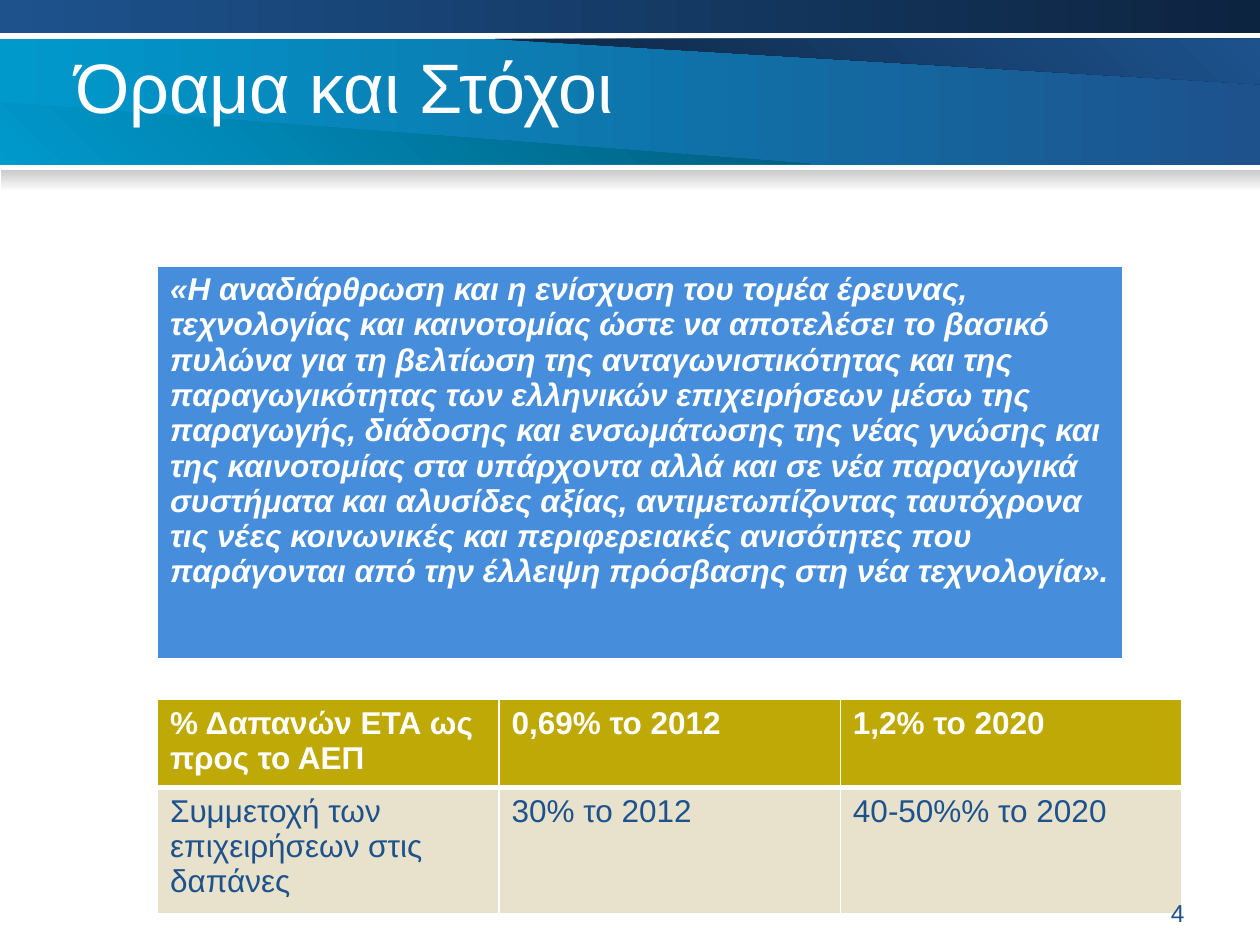
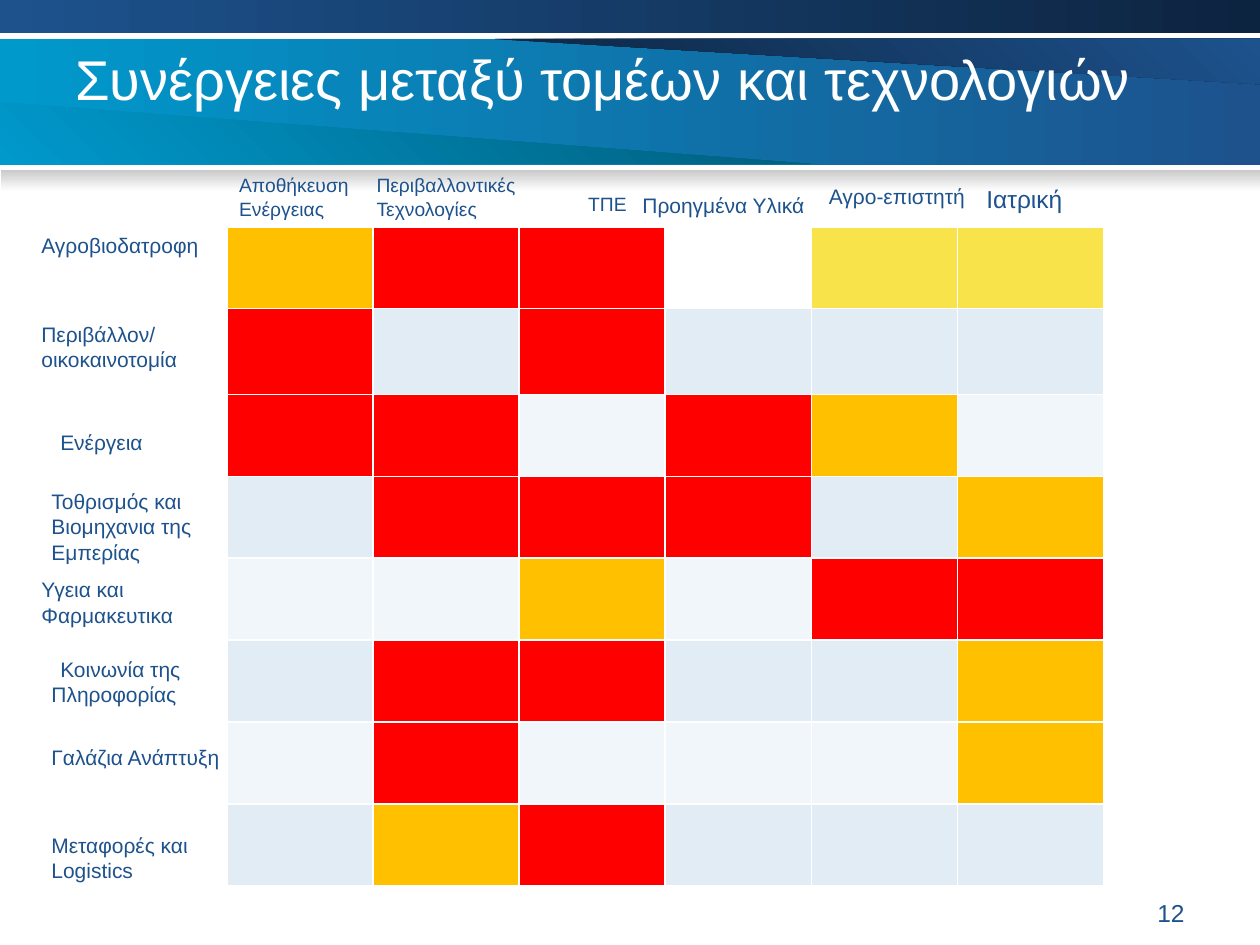
from lxml.etree import SubElement
from pptx import Presentation
from pptx.dml.color import RGBColor
from pptx.enum.shapes import MSO_SHAPE
from pptx.enum.text import MSO_ANCHOR, PP_ALIGN
from pptx.oxml.ns import qn
from pptx.util import Inches, Pt

FONT = "Arial"
WHITE = RGBColor(0xFF, 0xFF, 0xFF)
NAVY = RGBColor(0x1D, 0x52, 0x8D)
DARK_NAVY = RGBColor(0x0D, 0x24, 0x40)
CYAN = RGBColor(0x00, 0x99, 0xCC)
TEAL = RGBColor(0x00, 0x5C, 0x7B)
GREY = RGBColor(0xCA, 0xCA, 0xCA)
BLUE = RGBColor(0x46, 0x8D, 0xDC)
OLIVE = RGBColor(0xBF, 0xA9, 0x07)
SAND = RGBColor(0xE8, 0xE2, 0xCC)
RED = RGBColor(0xFF, 0x00, 0x00)
ORANGE = RGBColor(0xFF, 0xC0, 0x00)
YELLOW = RGBColor(0xF8, 0xE4, 0x4A)
BANDS = (RGBColor(0xF1, 0xF6, 0xFA), RGBColor(0xE2, 0xEC, 0xF4))

VISION = (
    "«Η αναδιάρθρωση και η ενίσχυση του τομέα έρευνας, τεχνολογίας και καινοτομίας "
    "ώστε να αποτελέσει το βασικό πυλώνα για τη βελτίωση της ανταγωνιστικότητας και "
    "της παραγωγικότητας των ελληνικών επιχειρήσεων μέσω της παραγωγής, διάδοσης και "
    "ενσωμάτωσης της νέας γνώσης και της καινοτομίας στα υπάρχοντα αλλά και σε νέα "
    "παραγωγικά συστήματα και αλυσίδες αξίας, αντιμετωπίζοντας ταυτόχρονα τις νέες "
    "κοινωνικές και περιφερειακές ανισότητες που παράγονται από την έλλειψη πρόσβασης "
    "στη νέα τεχνολογία»."
)
TARGETS = [
    ["% Δαπανών ΕΤΑ ως προς το ΑΕΠ", "0,69% το 2012", "1,2% το 2020"],
    ["Συμμετοχή των επιχειρήσεων στις δαπάνες", "30% το 2012", "40-50%% το 2020"],
]

LEVELS = {"R": RED, "O": ORANGE, "Y": YELLOW, ".": None}
SYNERGIES = ["ORR.YY", "R-R---", "RR-RO-", "-RRR-O", "--O-RR", "-RR--O", "-R---O", "-OR---"]
SECTORS = [
    ("Αγροβιοδατροφη", 0.23, 1.8, 0),
    ("Περιβάλλον/οικοκαινοτομία", 0.23, 2.5, 0),
    ("Ενέργεια", 0.38, 3.36, 0),
    ("Toθρισμός και Βιομηχανια της Εμπερίας", 0.31, 3.83, 0),
    ("Υγεια και Φαρμακευτικα", 0.23, 4.53, 0),
    ("Κοινωνία της Πληροφορίας", 0.31, 5.16, 0.07),
    ("Γαλάζια Ανάπτυξη", 0.31, 5.86, 0),
    ("Μεταφορές και Logistics", 0.31, 6.56, 0),
]
TECHNOLOGIES = [
    ("Aποθήκευση Ενέργειας", 1.8, 1.33, 1.17, 11),
    ("Περιβαλλοντικές Τεχνολογίες", 2.89, 1.33, 1.33, 11),
    ("ΤΠΕ", 4.57, 1.48, 0.66, 11),
    ("Προηγμένα Υλικά", 5, 1.48, 1.72, 12),
    ("Αγρο-επιστητή", 6.48, 1.41, 1.72, 12),
    ("Ιατρική", 7.73, 1.41, 1.72, 14),
]


class Deck:
    def __init__(self):
        self.prs = Presentation()
        self.prs.slide_width = Inches(10)
        self.prs.slide_height = Inches(7.5)

    def slide(self, title, size):
        self.s = self.prs.slides.add_slide(self.prs.slide_layouts[6])
        self.band(0, 0.31, 10.01, 1, CYAN, NAVY)
        self.wedge([(9.82, 0.31), (3.93, 0.31), (10.01, 0.67), (10.01, 0.31)], DARK_NAVY, NAVY)
        self.wedge([(0.19, 1.3), (6.43, 1.3), (0, 0.81), (0, 1.3)], CYAN, TEAL)
        self.band(0, 0, 10, 0.26, NAVY, DARK_NAVY)
        self.band(0.01, 1.35, 9.99, 0.17, GREY, WHITE, 270)
        self.text(title, 0.5, 0.3, 9, 1.25, size, WHITE)

    def number(self, number):
        self.text(number, 7.17, 7.08, 2.33, 0.27, 14, align=PP_ALIGN.RIGHT)

    def gradient(self, sp, start, end, angle):
        sp.shadow.inherit = False
        sp.line.fill.background()
        sp.fill.gradient()
        sp.fill.gradient_angle = angle
        for stop, color in zip(sp.fill.gradient_stops, (start, end)):
            stop.color.rgb = color

    def band(self, x, y, w, h, start, end, angle=0):
        sp = self.s.shapes.add_shape(MSO_SHAPE.RECTANGLE, Inches(x), Inches(y), Inches(w), Inches(h))
        self.gradient(sp, start, end, angle)

    def wedge(self, points, start, end):
        first, *rest = [(Inches(x), Inches(y)) for x, y in points]
        builder = self.s.shapes.build_freeform(*first)
        builder.add_line_segments(rest, close=True)
        self.gradient(builder.convert_to_shape(), start, end, 45)

    def font(self, p, size, color, bold=False, italic=False):
        f = p.font
        f.name, f.size, f.bold, f.italic = FONT, Pt(size), bold, italic
        f.color.rgb = color

    def text(self, text, x, y, w, h, size, color=NAVY, align=PP_ALIGN.LEFT, indent=0):
        tf = self.s.shapes.add_textbox(Inches(x), Inches(y), Inches(w), Inches(h)).text_frame
        tf.word_wrap = True
        tf.vertical_anchor = MSO_ANCHOR.TOP
        p = tf.paragraphs[0]
        p.text = text
        p.alignment = align
        if indent:
            p._p.get_or_add_pPr().set("indent", str(Inches(indent)))
        self.font(p, size, color)

    def table(self, x, y, col_widths, row_heights):
        frame = self.s.shapes.add_table(
            len(row_heights), len(col_widths), Inches(x), Inches(y),
            Inches(sum(col_widths)), Inches(sum(row_heights)))
        table = frame.table
        table.first_row = table.horz_banding = False
        for col, width in zip(table.columns, col_widths):
            col.width = Inches(width)
        for row, height in zip(table.rows, row_heights):
            row.height = Inches(height)
        return table

    def cell(self, cell, fill, bottom=1):
        tcPr = cell._tc.get_or_add_tcPr()
        for side, width in (("L", 1), ("R", 1), ("T", 1), ("B", bottom)):
            ln = SubElement(tcPr, qn(f"a:ln{side}"), w=str(Pt(width)))
            SubElement(SubElement(ln, qn("a:solidFill")), qn("a:srgbClr"), val=str(WHITE))
        if fill is None:
            cell.fill.background()
        else:
            cell.fill.solid()
            cell.fill.fore_color.rgb = fill

    def cell_text(self, cell, text, color, bold=False, italic=False):
        p = cell.text_frame.paragraphs[0]
        p.text = text
        self.font(p, 18, color, bold, italic)


def vision_slide(deck):
    deck.slide("Όραμα και Στόχοι", 40)
    quote = deck.table(1.25, 2.11, [7.66], [3.13]).cell(0, 0)
    deck.cell(quote, BLUE, 3)
    deck.cell_text(quote, VISION, WHITE, True, True)

    targets = deck.table(1.25, 5.55, [2.71] * 3, [0.41, 0.41])
    styles = [(OLIVE, WHITE, True, 3), (SAND, NAVY, False, 1)]
    for r, (texts, (fill, color, bold, bottom)) in enumerate(zip(TARGETS, styles)):
        for c, text in enumerate(texts):
            cell = targets.cell(r, c)
            deck.cell(cell, fill, bottom)
            deck.cell_text(cell, text, color, bold)
    deck.number("4")


def synergies_slide(deck):
    deck.slide("Συνέργειες μεταξύ τομέων και τεχνολογιών", 32)
    matrix = deck.table(1.8, 1.8, [1.16] * 6, [0.65, 0.68] + [0.65] * 6)
    for r, levels in enumerate(SYNERGIES):
        for c, level in enumerate(levels):
            deck.cell(matrix.cell(r, c), LEVELS.get(level, BANDS[r % 2]))
    for text, x, y, indent in SECTORS:
        deck.text(text, x, y, 1.72, 0.5, 12, indent=indent)
    for text, x, y, w, size in TECHNOLOGIES:
        deck.text(text, x, y, w, 0.3, size)
    deck.number("12")


def main():
    deck = Deck()
    vision_slide(deck)
    synergies_slide(deck)
    deck.prs.save("out.pptx")


if __name__ == "__main__":
    main()
